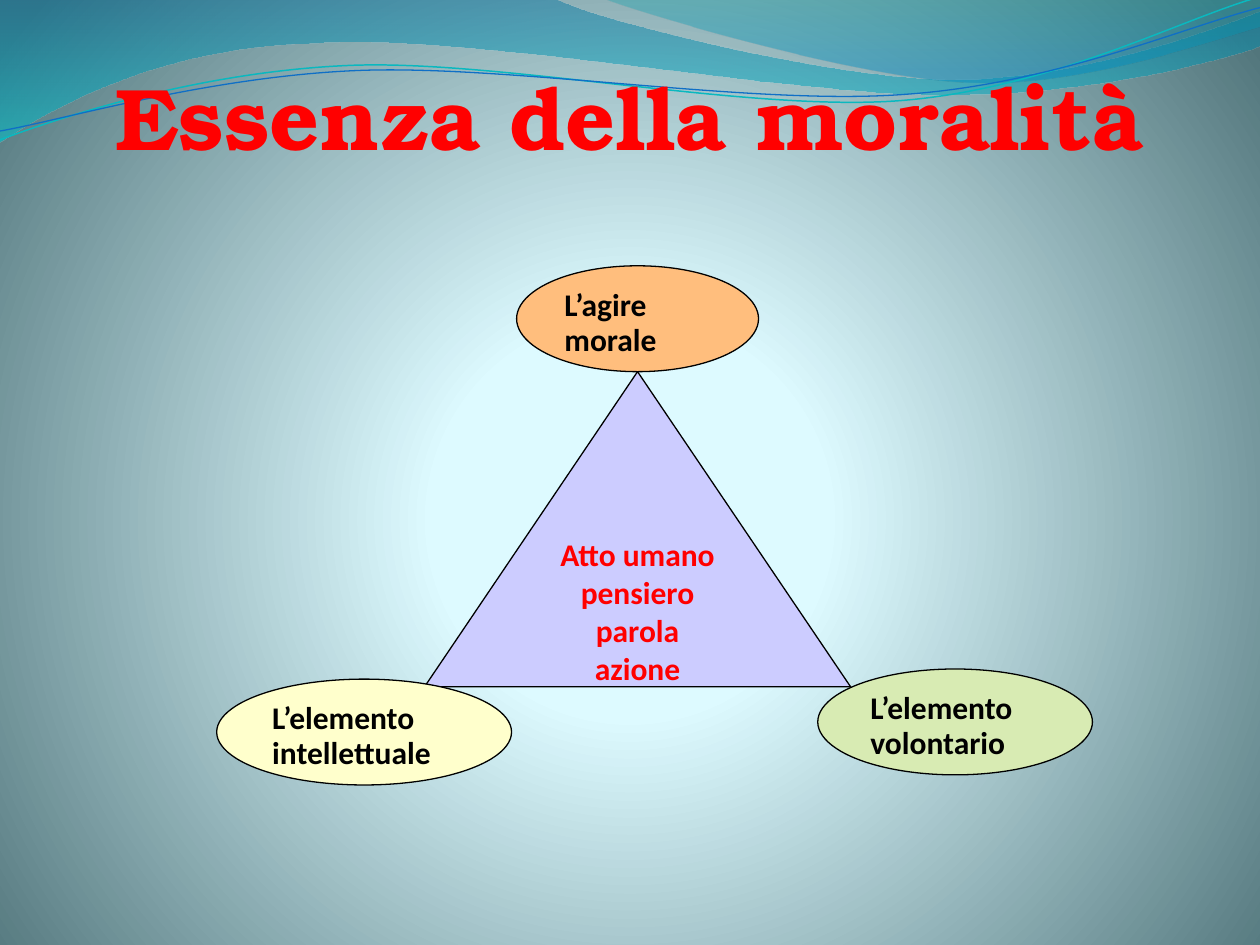
import math

from lxml import etree
from pptx import Presentation
from pptx.dml.color import RGBColor
from pptx.enum import shapes, text
from pptx.oxml import ns
from pptx.util import Inches, Pt

RED = RGBColor(0xFF, 0x00, 0x00)
BLACK = RGBColor(0x00, 0x00, 0x00)
LILAC = RGBColor(0xCC, 0xCC, 0xFF)
CREAM = RGBColor(0xFF, 0xFF, 0xCC)
ORANGE = RGBColor(0xFF, 0xBE, 0x7D)
GREEN = RGBColor(0xD8, 0xEB, 0xB3)
TEAL_LINE = RGBColor(0x0A, 0xB8, 0xBF)
BLUE_LINE = RGBColor(0x0F, 0x6F, 0xC6)
PALE = RGBColor(0xDE, 0xFB, 0xFF)
PALE_MID = RGBColor(0xDD, 0xFA, 0xFF)
SLATE = RGBColor(0x52, 0x76, 0x7C)
DEEP_BLUE = RGBColor(0x00, 0x74, 0xA1)
AQUA = RGBColor(0x00, 0xC6, 0xCF)
SEA = RGBColor(0x00, 0xA1, 0xA9)
SKY = RGBColor(0x00, 0x8B, 0xBF)

DOWNWARD = '<a:lin ang="5400000" scaled="0"/>'
RADIAL = ('<a:path path="circle"><a:fillToRect l="10000" t="110000" '
          'r="10000" b="100000"/></a:path>')
STRAND_TILT = -2.7


def set_gradient(fill, root, stops, shade):
    fill.gradient()
    grad = root.find(".//" + ns.qn("a:gradFill"))
    marks = "".join(
        f'<a:gs pos="{pos * 1000}"><a:srgbClr val="{color}">'
        f'<a:alpha val="{alpha * 1000}"/></a:srgbClr></a:gs>'
        for pos, color, alpha in stops)
    xml = f'<a:gradFill {ns.nsdecls("a")}><a:gsLst>{marks}</a:gsLst>{shade}</a:gradFill>'
    grad[:] = list(etree.fromstring(xml))


def write(tf, content, font="Calibri", size=18, color=BLACK, align=None, spacing=None):
    tf.word_wrap = True
    for i, line in enumerate(content.split("\n")):
        p = tf.paragraphs[0] if i == 0 else tf.add_paragraph()
        p.alignment = align or text.PP_ALIGN.LEFT
        p.line_spacing = spacing
        r = p.add_run()
        r.text = line
        r.font.name = font
        r.font.size = Pt(size)
        r.font.bold = True
        r.font.color.rgb = color


def to_local(point, box, tilt):
    left, top, width, height = box
    dx, dy = point[0] - left - width / 2, point[1] - top - height / 2
    cos, sin = math.cos(math.radians(tilt)), math.sin(math.radians(tilt))
    return (Inches(width / 2 + dx * cos + dy * sin),
            Inches(height / 2 - dx * sin + dy * cos))


def add_curve(parent, box, start, segments, closed=False, tilt=0):
    left, top, width, height = map(Inches, box)
    builder = parent.shapes.build_freeform(left, top)
    builder.add_line_segments([(left + width, top + height)], close=closed)
    sp = builder.convert_to_shape()
    sp.shadow.inherit = False
    sp.rotation = tilt
    outline = sp.element.find(".//" + ns.qn("a:path"))
    end = [etree.Element(ns.qn("a:close"))] if closed else []
    outline[:] = []
    for i, seg in enumerate([start] + segments):
        tag = "a:moveTo" if i == 0 else "a:lnTo" if len(seg) == 2 else "a:cubicBezTo"
        step = etree.SubElement(outline, ns.qn(tag))
        for point in zip(seg[::2], seg[1::2]):
            x, y = to_local(point, box, tilt)
            etree.SubElement(step, ns.qn("a:pt"), x=str(int(x)), y=str(int(y)))
    outline.extend(end)
    return sp


def add_waves(s):
    bands = [
        ((-0.01, -0.01, 10.02, 1.14), (0, 0),
         [(4.4, -0.01), (4.76, 0.17, 6.64, 0.63, 7.58, 0.63),
          (8.53, 0.63, 9.58, 0.26, 10, 0.09), (10.01, 0.36),
          (9.83, 0.44, 8.7, 0.76, 7.46, 0.75), (6.22, 0.75, 3.82, 0.28, 2.57, 0.34),
          (1.29, 0.36, 0.46, 0.83, -0.01, 1.13), (0, 0)],
         [(0, DEEP_BLUE, 45), (100, AQUA, 55)]),
        ((4.79, -0.01, 5.21, 0.7), (4.79, -0.01),
         [(5.09, 0.11, 6.82, 0.62, 7.69, 0.65), (8.56, 0.69, 9.61, 0.32, 10, 0.21),
          (10, 0), (4.79, -0.01)],
         [(0, SEA, 30), (80, SKY, 45)]),
    ]
    for box, start, segments, stops in bands:
        sp = add_curve(s, box, start, segments, closed=True)
        set_gradient(sp.fill, sp.element, stops, DOWNWARD)
        sp.line.fill.background()
    strands = [
        ((-0.02, 0.22, 10.02, 0.71), (0, 1.11),
         [(0.48, 0.93, 1.58, 0.57, 2.77, 0.52), (3.95, 0.47, 5.93, 0.89, 7.13, 0.8),
          (8.33, 0.71, 9.38, 0.15, 9.98, -0.02)], TEAL_LINE, 0.85),
        ((-0.02, 0.3, 10.03, 0.58), (0, 1.04),
         [(0.47, 0.96, 1.64, 0.61, 2.83, 0.56), (4.03, 0.51, 5.97, 0.84, 7.17, 0.75),
          (8.36, 0.67, 9.41, 0.21, 10, 0.06)], BLUE_LINE, 0.75),
    ]
    group = s.shapes.add_group_shape()
    for box, start, segments, color, width in strands:
        sp = add_curve(group, box, start, segments, tilt=STRAND_TILT)
        sp.fill.background()
        sp.line.color.rgb = color
        sp.line.width = Pt(width)


def add_title(s, left, top, width, height):
    tf = s.shapes.add_textbox(*map(Inches, (left, top, width, height))).text_frame
    tf.margin_left = tf.margin_right = tf.margin_bottom = 0
    tf.margin_top = Inches(0.05)
    tf.vertical_anchor = text.MSO_ANCHOR.BOTTOM
    write(tf, "Essenza della moralità", font="TeX Gyre Bonum", size=50, color=RED,
          align=text.PP_ALIGN.CENTER)


def add_node(parent, kind, box, fill, content, **fmt):
    sp = parent.shapes.add_shape(kind, *map(Inches, box))
    sp.shadow.inherit = False
    sp.fill.solid()
    sp.fill.fore_color.rgb = fill
    sp.line.color.rgb = BLACK
    sp.line.width = Pt(0.75)
    sp.text_frame.vertical_anchor = text.MSO_ANCHOR.TOP
    write(sp.text_frame, content, **fmt)


def add_morality_triangle(s, left, top):
    group = s.shapes.add_group_shape()
    add_node(group, shapes.MSO_SHAPE.ISOSCELES_TRIANGLE,
             (left + 1.65, top + 0.84, 3.38, 2.5), LILAC,
             "Atto umano\npensiero\nparola\nazione", color=RED,
             align=text.PP_ALIGN.CENTER)
    corners = [
        (0, 3.28, 2.34, CREAM, "L’elemento\nintellettuale"),
        (2.38, 0, 1.92, ORANGE, "L’agire\nmorale"),
        (4.77, 3.2, 2.18, GREEN, "L’elemento\nvolontario"),
    ]
    for x, y, width, fill, content in corners:
        add_node(group, shapes.MSO_SHAPE.OVAL, (left + x, top + y, width, 0.84), fill,
                 content, spacing=Pt(20))


def main():
    prs = Presentation()
    prs.slide_width = Inches(10)
    prs.slide_height = Inches(7.5)
    s = prs.slides.add_slide(prs.slide_layouts[6])
    set_gradient(s.background.fill, s.element,
                 [(0, PALE, 100), (25, PALE_MID, 100), (100, SLATE, 100)], RADIAL)
    add_waves(s)
    add_title(s, 0.5, 0.31, 9, 1.02)
    add_morality_triangle(s, 1.72, 2.11)
    prs.save("out.pptx")


if __name__ == "__main__":
    main()
